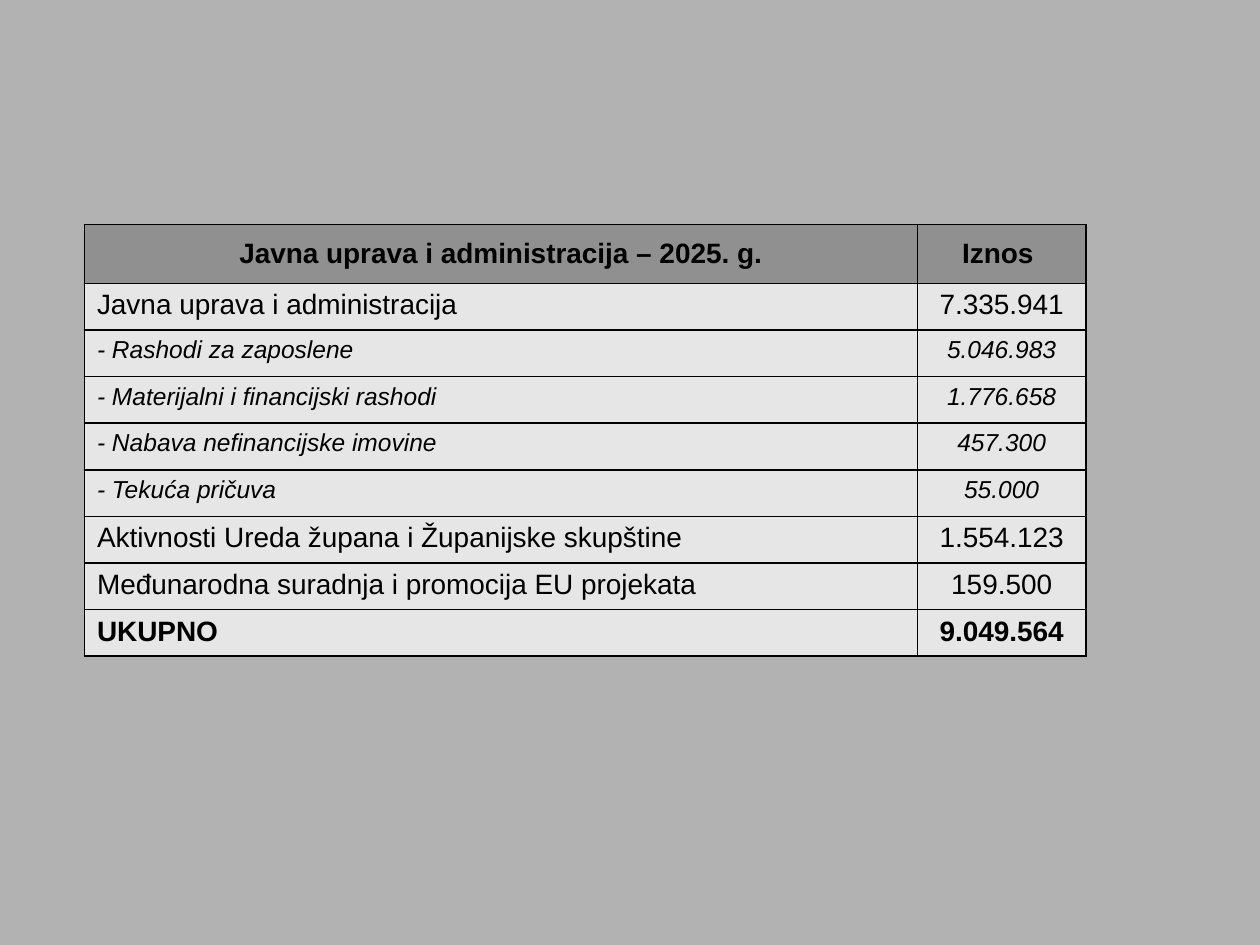
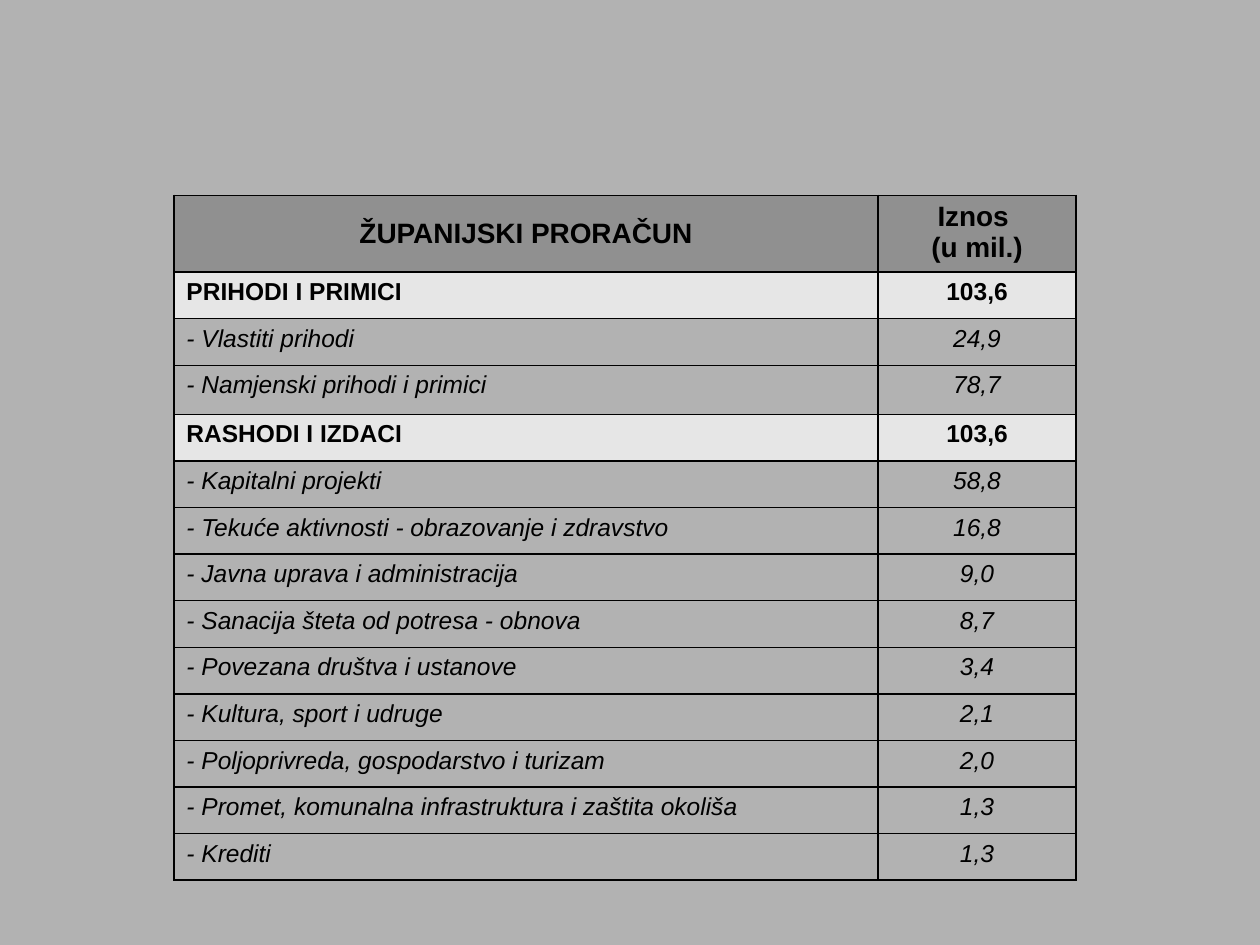
from collections import namedtuple

from lxml import etree
from pptx import Presentation
from pptx.dml.color import RGBColor
from pptx.enum.text import MSO_ANCHOR, PP_ALIGN
from pptx.oxml.ns import qn
from pptx.util import Inches, Pt

CENTER, LEFT = PP_ALIGN.CENTER, PP_ALIGN.LEFT
MIDDLE, TOP = MSO_ANCHOR.MIDDLE, MSO_ANCHOR.TOP
BACKGROUND, HEADER_FILL, LIGHT_FILL, INK = "B2B2B2", "909090", "E6E6E6", "000000"
FONT = "Arial"
BORDER_WIDTH = Pt(1)
ROW_HEIGHT = 0.37

Style = namedtuple("Style", "size bold italic fill")
HEADER = Style(16, True, False, HEADER_FILL)
ITEM = Style(16, False, False, LIGHT_FILL)
DETAIL = Style(14, False, True, LIGHT_FILL)
TOTAL = Style(16, True, False, LIGHT_FILL)
SECTION = Style(14, True, False, LIGHT_FILL)
OPEN_DETAIL = DETAIL._replace(fill=None)

ADMINISTRATION_ROWS = [
    (HEADER, "Javna uprava i administracija – 2025. g.", "Iznos "),
    (ITEM, "Javna uprava i administracija", "7.335.941"),
    (DETAIL, "- Rashodi za zaposlene", "5.046.983"),
    (DETAIL, "- Materijalni i financijski rashodi", "1.776.658"),
    (DETAIL, "- Nabava nefinancijske imovine", "457.300"),
    (DETAIL, "- Tekuća pričuva", "55.000"),
    (ITEM, "Aktivnosti Ureda župana i Županijske skupštine", "1.554.123"),
    (ITEM, "Međunarodna suradnja i promocija EU projekata", "159.500"),
    (TOTAL, "UKUPNO", "9.049.564"),
]

BUDGET_ROWS = [
    (HEADER, "ŽUPANIJSKI PRORAČUN", "Iznos \n(u mil.)"),
    (SECTION, "PRIHODI I PRIMICI", "103,6"),
    (OPEN_DETAIL, "- Vlastiti prihodi", "24,9"),
    (OPEN_DETAIL, "- Namjenski prihodi i primici", "78,7"),
    (SECTION, "RASHODI I IZDACI", "103,6"),
    (OPEN_DETAIL, "- Kapitalni projekti", "58,8"),
    (OPEN_DETAIL, "- Tekuće aktivnosti - obrazovanje i zdravstvo", "16,8"),
    (OPEN_DETAIL, "- Javna uprava i administracija", "9,0"),
    (OPEN_DETAIL, "- Sanacija šteta od potresa - obnova", "8,7"),
    (OPEN_DETAIL, "- Povezana društva i ustanove", "3,4"),
    (OPEN_DETAIL, "- Kultura, sport i udruge", "2,1"),
    (OPEN_DETAIL, "- Poljoprivreda, gospodarstvo i turizam", "2,0"),
    (OPEN_DETAIL, "- Promet, komunalna infrastruktura i zaštita okoliša", "1,3"),
    (OPEN_DETAIL, "- Krediti", "1,3"),
]


def color(hex_text):
    return RGBColor.from_string(hex_text)


def add_borders(cell):
    properties = cell._tc.get_or_add_tcPr()
    for side in ("a:lnL", "a:lnR", "a:lnT", "a:lnB"):
        line = etree.SubElement(properties, qn(side), w=str(BORDER_WIDTH))
        fill = etree.SubElement(line, qn("a:solidFill"))
        etree.SubElement(fill, qn("a:srgbClr"), val=INK)


def fill_cell(cell, text, style, alignment, anchor):
    add_borders(cell)
    if style.fill:
        cell.fill.solid()
        cell.fill.fore_color.rgb = color(style.fill)
    else:
        cell.fill.background()
    cell.vertical_anchor = anchor
    cell.text_frame.text = text
    for para in cell.text_frame.paragraphs:
        para.alignment = alignment
        for span in para.runs:
            span.font.name = FONT
            span.font.size = Pt(style.size)
            span.font.bold = style.bold
            span.font.italic = style.italic
            span.font.color.rgb = color(INK)


def add_amount_table(page, left, top, column_widths, row_heights, rows):
    frame = page.shapes.add_table(
        len(rows), len(column_widths), Inches(left), Inches(top),
        Inches(sum(column_widths)), Inches(sum(row_heights)))
    table = frame.table
    table.first_row = table.horz_banding = False
    for column, width in zip(table.columns, column_widths):
        column.width = Inches(width)
    for row, height, (style, label, amount) in zip(table.rows, row_heights, rows):
        row.height = Inches(height)
        is_header = style is HEADER
        label_cell, amount_cell = row.cells
        fill_cell(label_cell, label, style, CENTER if is_header else LEFT,
                  MIDDLE if is_header else TOP)
        fill_cell(amount_cell, amount, style, CENTER,
                  MIDDLE if is_header and "\n" not in amount else TOP)


def add_page(deck):
    page = deck.slides.add_slide(deck.slide_layouts[6])
    page.background.fill.solid()
    page.background.fill.fore_color.rgb = color(BACKGROUND)
    return page


def main():
    deck = Presentation()
    deck.slide_width, deck.slide_height = Inches(10), Inches(7.5)
    add_amount_table(add_page(deck), 0.67, 1.78, [6.61, 1.34],
                     [0.47] + [ROW_HEIGHT] * 8, ADMINISTRATION_ROWS)
    add_amount_table(add_page(deck), 1.38, 1.55, [5.59, 1.57],
                     [0.61, ROW_HEIGHT, ROW_HEIGHT, 0.39] + [ROW_HEIGHT] * 10,
                     BUDGET_ROWS)
    deck.save("out.pptx")


if __name__ == "__main__":
    main()
